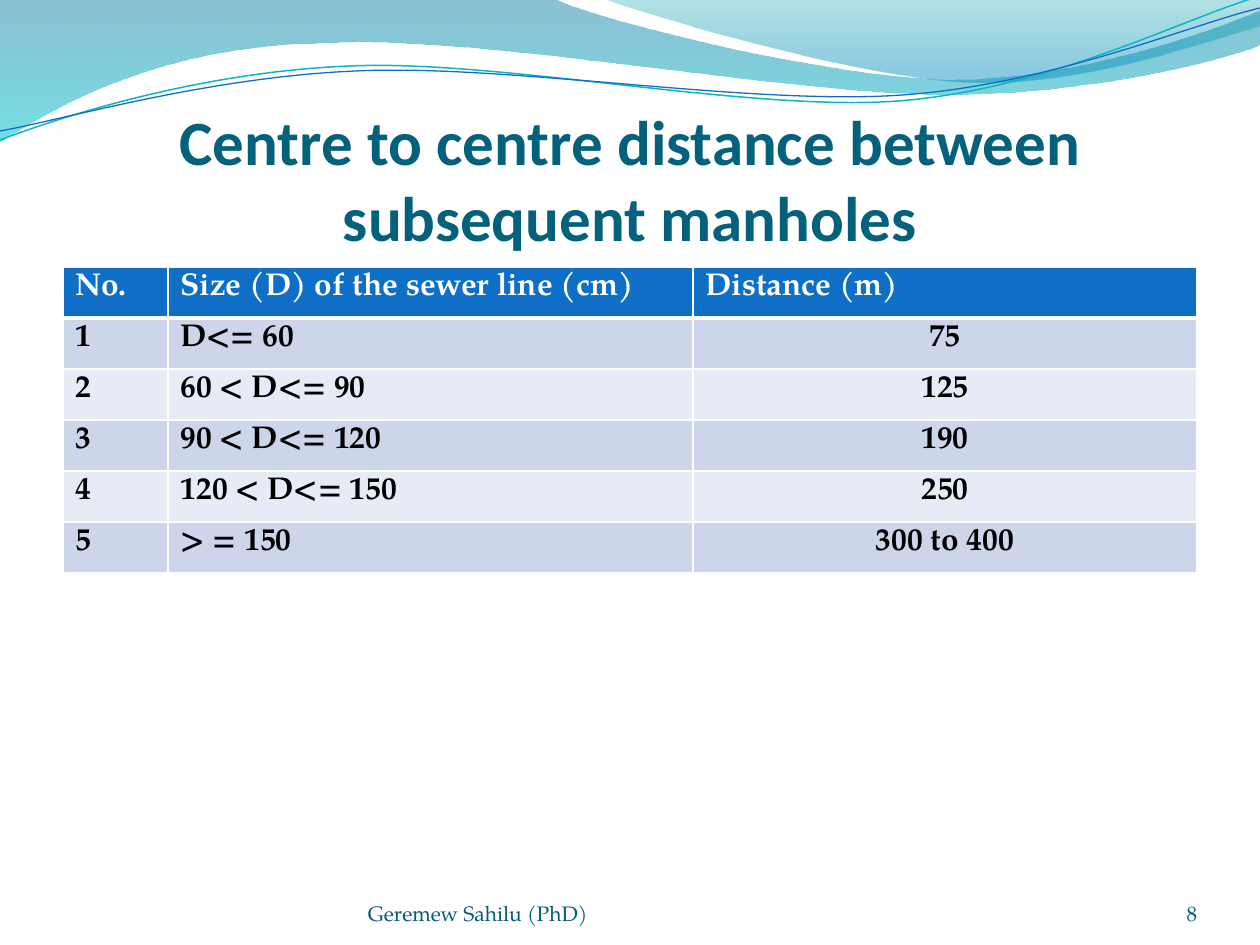
from dataclasses import dataclass

from lxml import etree
from pptx import Presentation
from pptx.dml.color import RGBColor
from pptx.enum.text import MSO_ANCHOR, PP_ALIGN
from pptx.oxml.ns import qn
from pptx.util import Emu, Pt

LEFT, CENTER, RIGHT = PP_ALIGN.LEFT, PP_ALIGN.CENTER, PP_ALIGN.RIGHT
BOTTOM = MSO_ANCHOR.BOTTOM
EMU_PER_PX = 914400 / 126
SLIDE_SIZE = (1260, 945)


@dataclass(frozen=True)
class Theme:
    """Colours, fonts and type sizes of the slide."""
    title: str = "04617B"
    footer: str = "045D75"
    header: str = "0F6FC6"
    teal: str = "0AB8BF"
    white: str = "FFFFFF"
    black: str = "000000"
    bands: tuple = ("CCD5EA", "E7EBF5")
    heading_font: str = "Calibri"
    body_font: str = "TeX Gyre Pagella"
    title_size: int = 36
    table_size: int = 18
    footer_size: int = 12


THEME = Theme()

WAVES = [
    {"outline": [(0, 0), (554, -1), (600, 21, 837, 79, 955, 79),
                 (1075, 79, 1207, 33, 1260, 11), (1261, 45),
                 (1239, 55, 1096, 96, 940, 94), (784, 94, 481, 35, 324, 43),
                 (163, 45, 58, 105, -1, 142)],
     "stops": [(0, "0074A1", 45), (1, "00C6CF", 55)]},
    {"outline": [(604, -1), (641, 14, 859, 78, 969, 82),
                 (1079, 87, 1211, 40, 1260, 26), (1260, 0)],
     "stops": [(0, "00A1A9", 30), (0.8, "008BBF", 45)]},
    {"outline": [(0, 140), (60, 117, 199, 72, 349, 66),
                 (498, 59, 747, 112, 898, 101), (1050, 89, 1182, 19, 1257, -3)],
     "line": (THEME.teal, 0.85)},
    {"outline": [(0, 131), (59, 121, 207, 77, 357, 71),
                 (508, 64, 752, 106, 903, 95), (1053, 84, 1186, 26, 1260, 8)],
     "line": (THEME.header, 0.75)},
]

COLUMN_WIDTHS = (105, 525, 504)
ROW_HEIGHT = 51
ROWS = [
    ("No.", "Size (D) of the sewer line (cm)", "Distance (m)"),
    ("1", "D<= 60", "75"),
    ("2", "60 < D<= 90", "125"),
    ("3", "90 < D<= 120", "190"),
    ("4", "120 < D<= 150", "250"),
    ("5", "> = 150", "300 to 400"),
]


def px(value):
    """Turn pixels into EMU."""
    return Emu(round(value * EMU_PER_PX))


def bend(shape, segments):
    """Join the line steps of each six-number segment into one cubic curve."""
    steps = iter(list(shape.element.iter(qn("a:lnTo"))))
    for segment in segments:
        lines = [next(steps) for _ in range(len(segment) // 2)]
        if len(lines) == 1:
            continue
        curve = etree.Element(qn("a:cubicBezTo"))
        lines[0].addprevious(curve)
        for line in lines:
            curve.append(line[0])
            line.getparent().remove(line)


def add_wave(slide, outline, stops=None, line=None):
    """Draw a wave as a gradient area or as an open line."""
    points = [(px(segment[i]), px(segment[i + 1]))
              for segment in outline for i in range(0, len(segment), 2)]
    builder = slide.shapes.build_freeform(*points[0])
    builder.add_line_segments(points[1:], close=bool(stops))
    wave = builder.convert_to_shape()
    bend(wave, outline[1:])
    wave.shadow.inherit = False
    if stops:
        wave.line.fill.background()
        wave.fill.gradient()
        wave.fill.gradient_angle = 270
        for stop, (position, color, _) in zip(wave.fill.gradient_stops, stops):
            stop.position = position
            stop.color.rgb = RGBColor.from_string(color)
        for node, (_, _, opacity) in zip(wave.element.iter(qn("a:srgbClr")), stops):
            etree.SubElement(node, qn("a:alpha"), val=str(opacity * 1000))
    else:
        color, width = line
        wave.fill.background()
        wave.line.color.rgb = RGBColor.from_string(color)
        wave.line.width = Pt(width)


def write(frame, text, font, size, color, bold=False, align=LEFT):
    """Write one formatted paragraph into a text frame."""
    para = frame.paragraphs[0]
    para.alignment = align
    span = para.add_run()
    span.text = text
    for name, value in {"name": font, "size": Pt(size), "bold": bold}.items():
        setattr(span.font, name, value)
    span.font.color.rgb = RGBColor.from_string(color)


def add_text(slide, bounds, text, top_inset=0, **style):
    """Add a bottom-anchored text box."""
    frame = slide.shapes.add_textbox(*map(px, bounds)).text_frame
    layout = {"word_wrap": True, "vertical_anchor": BOTTOM, "margin_left": 0,
              "margin_right": 0, "margin_top": px(top_inset), "margin_bottom": 0}
    for name, value in layout.items():
        setattr(frame, name, value)
    write(frame, text, **style)


def add_borders(cell, widths):
    """Give a cell white borders with widths in points by side."""
    properties = cell._tc.get_or_add_tcPr()
    for side, width in widths.items():
        border = etree.SubElement(properties, qn(f"a:ln{side}"), w=str(Pt(width)))
        fill = etree.SubElement(border, qn("a:solidFill"))
        etree.SubElement(fill, qn("a:srgbClr"), val=THEME.white)


def add_distance_table(slide, left, top):
    """Add the table of manhole distances."""
    size = (sum(COLUMN_WIDTHS), ROW_HEIGHT * len(ROWS))
    table = slide.shapes.add_table(len(ROWS), len(COLUMN_WIDTHS),
                                   *map(px, (left, top, *size))).table
    for column, width in zip(table.columns, COLUMN_WIDTHS):
        column.width = px(width)
    for row, texts in enumerate(ROWS):
        table.rows[row].height = px(ROW_HEIGHT)
        is_header = row == 0
        fill = THEME.header if is_header else THEME.bands[(row - 1) % 2]
        color = THEME.white if is_header else THEME.black
        borders = {"L": 1, "R": 1, "T": 3 if row == 1 else 1, "B": 3 if is_header else 1}
        for column, text in enumerate(texts):
            cell = table.cell(row, column)
            add_borders(cell, borders)
            cell.fill.solid()
            cell.fill.fore_color.rgb = RGBColor.from_string(fill)
            align = CENTER if column == 2 and not is_header else LEFT
            write(cell.text_frame, text, THEME.body_font, THEME.table_size,
                  color, bold=True, align=align)


def main():
    """Build and save the slide."""
    deck = Presentation()
    deck.slide_width, deck.slide_height = map(px, SLIDE_SIZE)
    page = deck.slides.add_slide(deck.slide_layouts[6])
    for wave in WAVES:
        add_wave(page, **wave)
    add_text(page, (63, 97, 1134, 157),
             "Centre to centre distance between subsequent manholes", top_inset=6,
             font=THEME.heading_font, size=THEME.title_size, color=THEME.title,
             bold=True, align=CENTER)
    add_distance_table(page, 63, 267)
    footer = {"font": THEME.body_font, "size": THEME.footer_size, "color": THEME.footer}
    add_text(page, (368, 876, 462, 50), "Geremew Sahilu (PhD)", **footer)
    add_text(page, (1092, 876, 105, 50), "8", align=RIGHT, **footer)
    deck.save("out.pptx")


if __name__ == "__main__":
    main()
